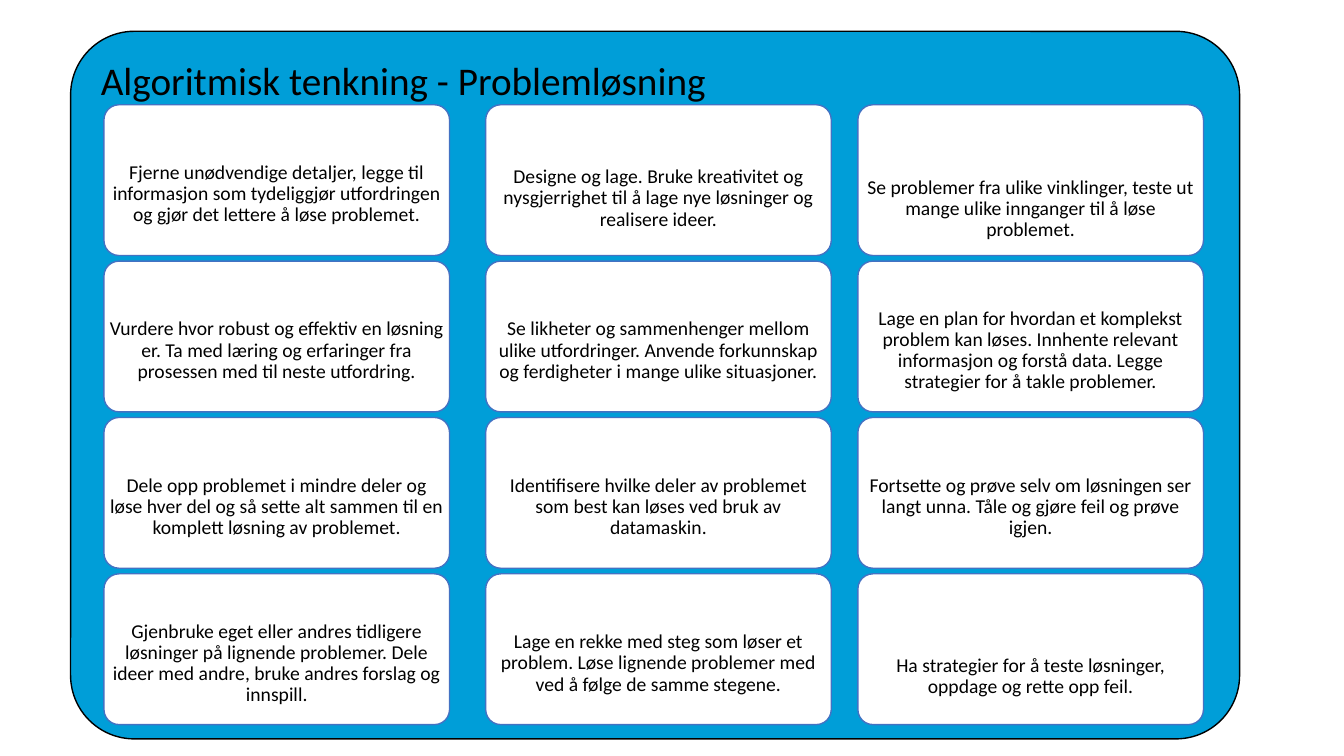
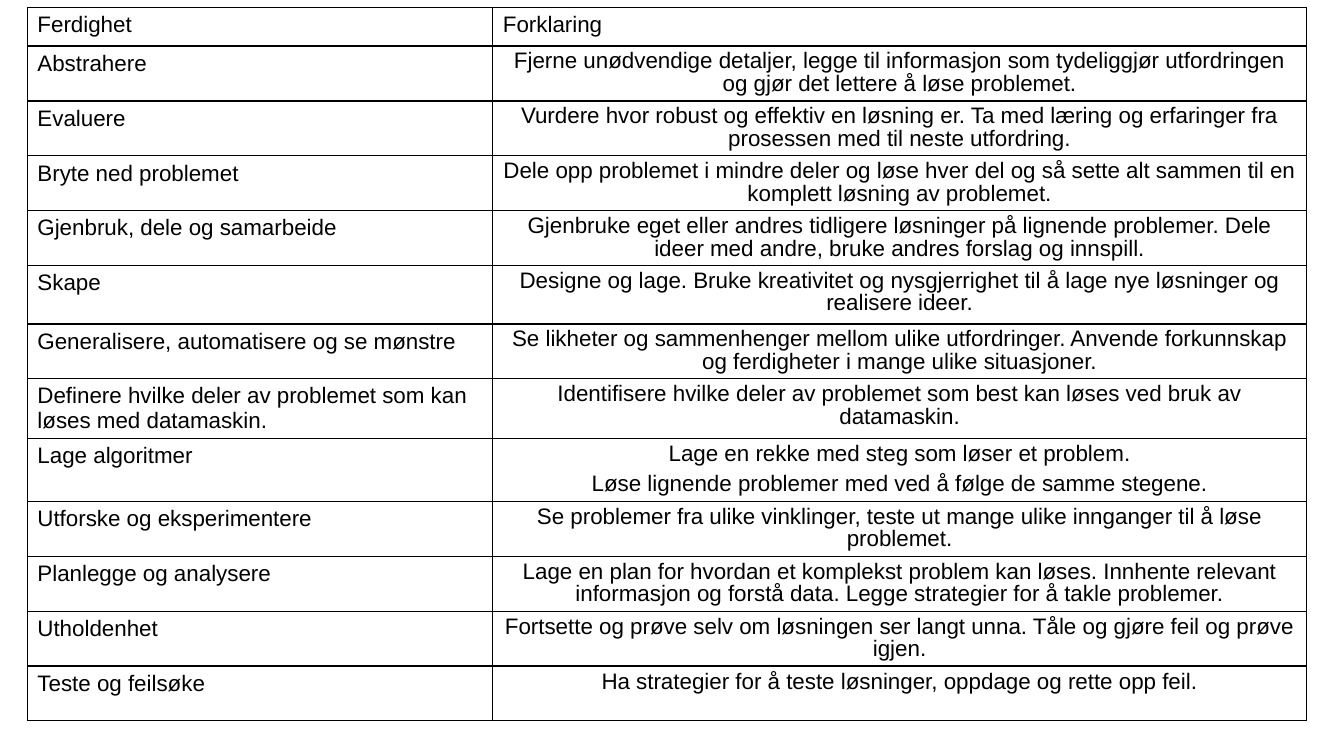
"""Build two slides on the skills of computational thinking."""
from lxml.etree import SubElement as Sub
from pptx import Presentation
from pptx.dml.color import RGBColor as RGB
from pptx.enum.shapes import MSO_SHAPE as SHAPE
from pptx.enum.text import MSO_ANCHOR as ANCHOR, PP_ALIGN as ALIGN
from pptx.oxml.ns import qn
from pptx.util import Cm, Pt

COLORS = {"panel": "009ED8", "card": "FFFFFF", "edge": "4372C3", "ink": "000000"}
TITLE = "Algoritmisk tenkning - Problemløsning"
HEADER = ("Ferdighet", "Forklaring")
SKILLS = [
    ("Abstrahere", "Fjerne unødvendige detaljer, legge til informasjon som tydeliggjør "
     "utfordringen og gjør det lettere å løse problemet."),
    ("Evaluere", "Vurdere hvor robust og effektiv en løsning er. Ta med læring og "
     "erfaringer fra prosessen med til neste utfordring."),
    ("Bryte ned problemet", "Dele opp problemet i mindre deler og løse hver del og så "
     "sette alt sammen til en komplett løsning av problemet."),
    ("Gjenbruk, dele og samarbeide", "Gjenbruke eget eller andres tidligere løsninger på "
     "lignende problemer. Dele ideer med andre, bruke andres forslag og innspill."),
    ("Skape", "Designe og lage. Bruke kreativitet og nysgjerrighet til å lage nye "
     "løsninger og realisere ideer."),
    ("Generalisere, automatisere og se mønstre", "Se likheter og sammenhenger mellom ulike "
     "utfordringer. Anvende forkunnskap og ferdigheter i mange ulike situasjoner."),
    ("Definere hvilke deler av problemet som kan løses med datamaskin.",
     "Identifisere hvilke deler av problemet som best kan løses ved bruk av datamaskin."),
    ("Lage algoritmer", "Lage en rekke med steg som løser et problem.\n"
     "Løse lignende problemer med ved å følge de samme stegene."),
    ("Utforske og eksperimentere", "Se problemer fra ulike vinklinger, teste ut mange ulike "
     "innganger til å løse problemet."),
    ("Planlegge og analysere", "Lage en plan for hvordan et komplekst problem kan løses. "
     "Innhente relevant informasjon og forstå data. Legge strategier for å takle problemer."),
    ("Utholdenhet", "Fortsette og prøve selv om løsningen ser langt unna. Tåle og gjøre "
     "feil og prøve igjen."),
    ("Teste og feilsøke", "Ha strategier for å teste løsninger, oppdage og rette opp feil."),
]

CARD_LEFTS = (2.62, 12.24, 21.62)
CARD_TOP, CARD_PITCH, CARD_ROWS = 2.64, 3.94, 4
CARD_W, CARD_H = 8.71, 3.8
CARD_LEAD = 0.72
EXTRA_LEADS = {"Skape": 0.93, "Utforske og eksperimentere": 1.45, "Teste og feilsøke": 1.4}

ROW_H = 1.38
ROW_HEIGHTS = {"Ferdighet": 0.97, "Skape": 1.47, "Lage algoritmer": 1.58}
COL_WIDTHS = (11.73, 20.5)


def color(name):
    return RGB.from_string(COLORS[name])


def write(tf, text, font, size, align=ALIGN.LEFT, spacing=None):
    for i, line in enumerate(text.split("\n")):
        p = tf.add_paragraph() if i else tf.paragraphs[0]
        p.alignment = align
        if spacing:
            p.line_spacing = spacing
        if i:
            p.space_before = Pt(5.6)
        r = p.add_run()
        r.text = line
        r.font.name, r.font.size = font, Pt(size)
        r.font.color.rgb = color("ink")


def add_box(s, left, top, width, height, corner, fill, line):
    sp = s.shapes.add_shape(SHAPE.ROUNDED_RECTANGLE, Cm(left), Cm(top), Cm(width), Cm(height))
    sp.adjustments[0] = corner
    sp.shadow.inherit = False
    sp.fill.solid()
    sp.fill.fore_color.rgb = color(fill)
    sp.line.color.rgb = color(line)
    sp.line.width = Pt(1)
    sp.text_frame.word_wrap = True
    return sp


def set_insets(tf, side, top):
    tf.margin_left = tf.margin_right = tf.margin_bottom = Cm(side)
    tf.margin_top = Cm(top)


def add_panel(s, title):
    tf = add_box(s, 1.78, 0.79, 29.46, 17.83, 0.09, "panel", "ink").text_frame
    tf.vertical_anchor = ANCHOR.TOP
    set_insets(tf, 0.29, 0.29)
    write(tf, title, "Calibri", 28, spacing=0.9)


def add_card(s, left, top, text, lead):
    tf = add_box(s, left, top, CARD_W, CARD_H, 0.1, "card", "edge").text_frame
    tf.vertical_anchor = ANCHOR.MIDDLE
    set_insets(tf, 0.02, 0.02 + lead)
    write(tf, text, "Calibri", 14, ALIGN.CENTER, 0.9)


def style_cell(cell):
    tc_pr = cell._tc.get_or_add_tcPr()
    for side in ("a:lnL", "a:lnR", "a:lnT", "a:lnB"):
        ln = Sub(tc_pr, qn(side), w=str(Pt(1)))
        Sub(Sub(ln, qn("a:solidFill")), qn("a:srgbClr"), val=COLORS["ink"])
    cell.fill.background()


def add_skill_table(s, rows):
    heights = [ROW_HEIGHTS.get(name, ROW_H) for name, _ in rows]
    frame = s.shapes.add_table(len(rows), len(COL_WIDTHS), Cm(0.69), Cm(0.19),
                               Cm(sum(COL_WIDTHS)), Cm(sum(heights)))
    table = frame.table
    table.first_row = table.horz_banding = False
    for col, width in zip(table.columns, COL_WIDTHS):
        col.width = Cm(width)
    for i, (row, height) in enumerate(zip(table.rows, heights)):
        row.height = Cm(height)
        for j, (cell, text) in enumerate(zip(row.cells, rows[i])):
            style_cell(cell)
            layout = (ALIGN.CENTER, 0.9) if i and j else ()
            write(cell.text_frame, text, "Arial", 16, *layout)


def main():
    prs = Presentation()
    prs.slide_width, prs.slide_height = Cm(33.87), Cm(19.05)
    blank = prs.slide_layouts[6]

    s = prs.slides.add_slide(blank)
    add_panel(s, TITLE)
    for i, (name, text) in enumerate(SKILLS):
        col, row = divmod(i, CARD_ROWS)
        add_card(s, CARD_LEFTS[col], CARD_TOP + row * CARD_PITCH,
                 text.replace("\n", " "), EXTRA_LEADS.get(name, CARD_LEAD))

    s = prs.slides.add_slide(blank)
    add_skill_table(s, [HEADER, *SKILLS])
    prs.save("out.pptx")


if __name__ == "__main__":
    main()
